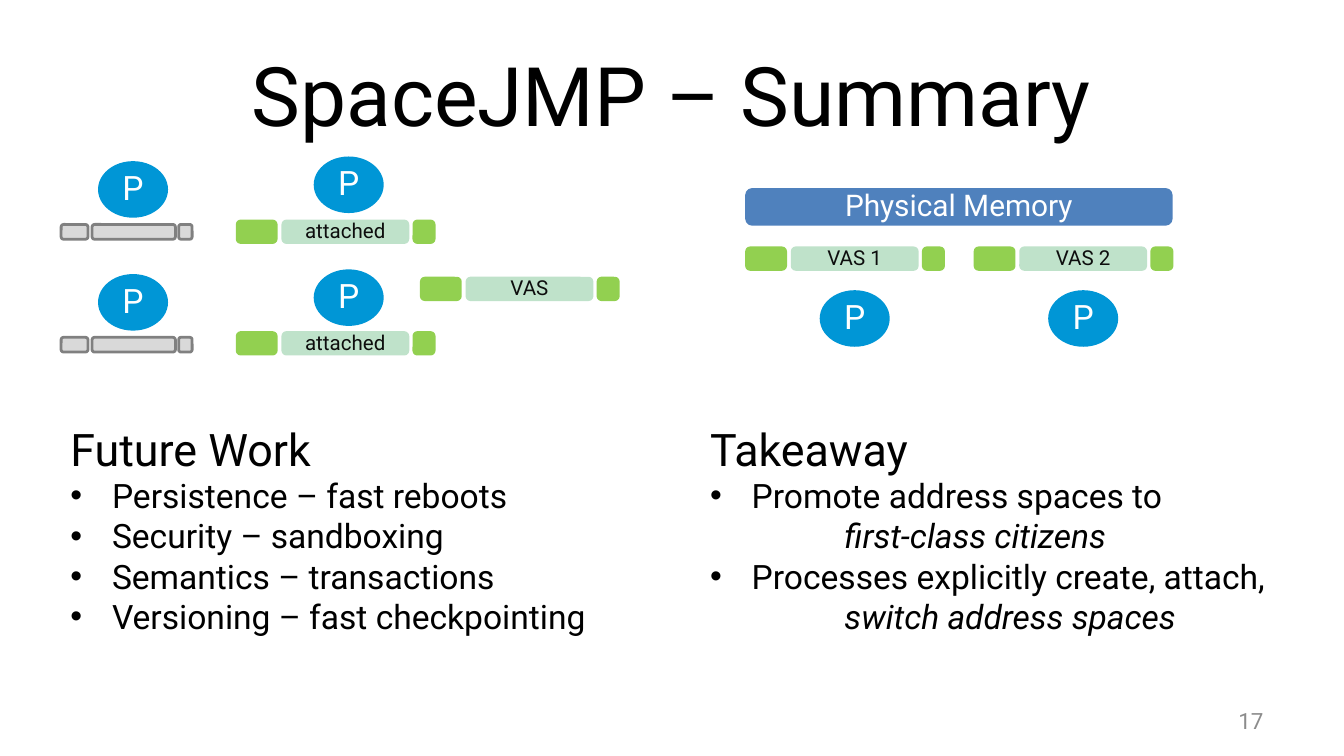
from dataclasses import dataclass

from lxml.etree import SubElement
from pptx import Presentation
from pptx.dml.color import RGBColor
from pptx.enum.shapes import MSO_SHAPE as Shape
from pptx.enum.text import MSO_ANCHOR as Anchor, PP_ALIGN as Align
from pptx.oxml.ns import qn
from pptx.util import Emu, Pt

EMU_PER_PX = 4572  # 200 px to the inch


def px(length: int) -> Emu:
    return Emu(length * EMU_PER_PX)


@dataclass(frozen=True)
class Theme:
    font: str = "Roboto"
    ink: str = "000000"
    white: str = "FFFFFF"
    label: str = "0D0D0D"
    page: str = "8C8C8C"
    process: str = "0096D6"
    memory: str = "4F81BD"
    edge_segment: str = "92D050"
    shared_segment: str = "BFE2CA"
    private_fill: str = "D9D9D9"
    private_line: str = "808080"
    title_pt: int = 44
    heading_pt: int = 24
    body_pt: int = 18
    memory_pt: int = 16
    page_pt: int = 12
    label_pt: int = 11
    line_pt: float = 1.5


THEME = Theme()


@dataclass(frozen=True)
class Box:
    left: int
    top: int
    width: int
    height: int

    def emu(self) -> tuple[Emu, ...]:
        return tuple(map(px, (self.left, self.top, self.width, self.height)))


@dataclass(frozen=True)
class Style:
    fill: str
    line: str
    ink: str = THEME.white
    size: int = THEME.body_pt


@dataclass(frozen=True)
class AddressSpace:
    left: int
    top: int
    label: str


@dataclass(frozen=True)
class Line:
    text: str
    italic: bool = False


@dataclass(frozen=True)
class Column:
    box: Box
    heading: str
    bullets: tuple[tuple[Line, ...], ...]


PROCESS = Style(THEME.process, THEME.process)
MEMORY = Style(THEME.memory, THEME.memory, size=THEME.memory_pt)
EDGE = Style(THEME.edge_segment, THEME.edge_segment)
SHARED = Style(THEME.shared_segment, THEME.shared_segment, THEME.label, THEME.label_pt)
PRIVATE = Style(THEME.private_fill, THEME.private_line)

# Offset and width of the three segments in each kind of bar
SPACE_SEGMENTS = ((0, 58, EDGE), (68, 186, SHARED), (263, 30, EDGE))
PRIVATE_SEGMENTS = ((0, 40, PRIVATE), (46, 124, PRIVATE), (175, 20, PRIVATE))

PROCESSES = ((148, 242), (148, 410), (469, 235), (469, 403), (1222, 434), (1562, 434))
PRIVATE_MEMORIES = ((91, 334), (91, 502))
ADDRESS_SPACES = (
    AddressSpace(1111, 369, "VAS 1"),
    AddressSpace(1451, 369, "VAS 2"),
    AddressSpace(627, 414, "VAS"),
    AddressSpace(353, 329, "attached"),
    AddressSpace(353, 495, "attached"),
)
COLUMNS = (
    Column(Box(85, 617, 942, 344), "Future Work", (
        (Line("Persistence – fast reboots"),),
        (Line("Security – sandboxing"),),
        (Line("Semantics – transactions"),),
        (Line("Versioning – fast checkpointing"),),
    )),
    Column(Box(1037, 617, 878, 344), "Takeaway", (
        (Line("Promote address spaces to"), Line("\t\tfirst-class citizens", True)),
        (Line("Processes explicitly create, attach,"), Line("\t\tswitch address spaces", True)),
    )),
)


def add_run(paragraph, text: str, size: int, color: str, italic: bool = False) -> None:
    run = paragraph.add_run()
    run.text = text
    run.font.name = THEME.font
    run.font.size = Pt(size)
    run.font.italic = italic
    run.font.color.rgb = RGBColor.from_string(color)


def add_block(shapes, kind: Shape, box: Box, style: Style, label: str = "") -> None:
    """Draw a filled preset shape, with a centred label if there is one."""
    block = shapes.add_shape(kind, *box.emu())
    block.shadow.inherit = False
    block.fill.solid()
    block.fill.fore_color.rgb = RGBColor.from_string(style.fill)
    block.line.color.rgb = RGBColor.from_string(style.line)
    block.line.width = Pt(THEME.line_pt)
    if not label:
        return
    frame = block.text_frame
    frame.vertical_anchor = Anchor.MIDDLE
    if kind == Shape.OVAL:
        frame.margin_left = frame.margin_right = frame.margin_top = frame.margin_bottom = 0
    paragraph = frame.paragraphs[0]
    paragraph.alignment = Align.CENTER
    paragraph.line_spacing = 0.9
    add_run(paragraph, label, style.size, style.ink)


def add_bar(shapes, left: int, top: int, height: int, segments: tuple, label: str = "") -> None:
    """Draw a grouped bar of three segments, the middle one labelled."""
    bar = shapes.add_group_shape().shapes
    for index, (offset, width, style) in enumerate(segments):
        add_block(bar, Shape.ROUNDED_RECTANGLE, Box(left + offset, top, width, height),
                  style, label if index == 1 else "")


def add_frame(shapes, box: Box, anchor: Anchor):
    frame = shapes.add_textbox(*box.emu()).text_frame
    frame.word_wrap = True
    frame.vertical_anchor = anchor
    return frame


def add_caption(shapes, box: Box, text: str, size: int, color: str, align: Align) -> None:
    paragraph = add_frame(shapes, box, Anchor.MIDDLE).paragraphs[0]
    paragraph.alignment = align
    add_run(paragraph, text, size, color)


def make_bullet(paragraph) -> None:
    properties = paragraph._p.get_or_add_pPr()
    properties.set("marL", str(px(62)))
    properties.set("indent", str(-px(62)))
    properties.set("defTabSz", str(px(100)))
    SubElement(properties, qn("a:buFont")).set("typeface", "Arial")
    SubElement(properties, qn("a:buChar")).set("char", "•")


def add_column(shapes, column: Column) -> None:
    frame = add_frame(shapes, column.box, Anchor.TOP)
    add_run(frame.paragraphs[0], column.heading, THEME.heading_pt, THEME.ink)
    for lines in column.bullets:
        paragraph = frame.add_paragraph()
        make_bullet(paragraph)
        for index, line in enumerate(lines):
            if index:
                paragraph.add_line_break()
            add_run(paragraph, line.text, THEME.body_pt, THEME.ink, line.italic)


def main() -> None:
    deck = Presentation()
    deck.slide_width, deck.slide_height = px(2000), px(1125)
    shapes = deck.slides.add_slide(deck.slide_layouts[6]).shapes

    add_caption(shapes, Box(100, 46, 1800, 188), "SpaceJMP – Summary",
                THEME.title_pt, THEME.ink, Align.CENTER)
    add_block(shapes, Shape.ROUNDED_RECTANGLE, Box(1111, 282, 632, 52), MEMORY, "Physical Memory")
    for left, top in PRIVATE_MEMORIES:
        add_bar(shapes, left, top, 22, PRIVATE_SEGMENTS)
    for space in ADDRESS_SPACES:
        add_bar(shapes, space.left, space.top, 32, SPACE_SEGMENTS, space.label)
    for left, top in PROCESSES:
        add_block(shapes, Shape.OVAL, Box(left, top, 100, 80), PROCESS, "P")
    for column in COLUMNS:
        add_column(shapes, column)
    add_caption(shapes, Box(1434, 1043, 466, 60), "17", THEME.page_pt, THEME.page, Align.RIGHT)

    deck.save("out.pptx")


if __name__ == "__main__":
    main()
